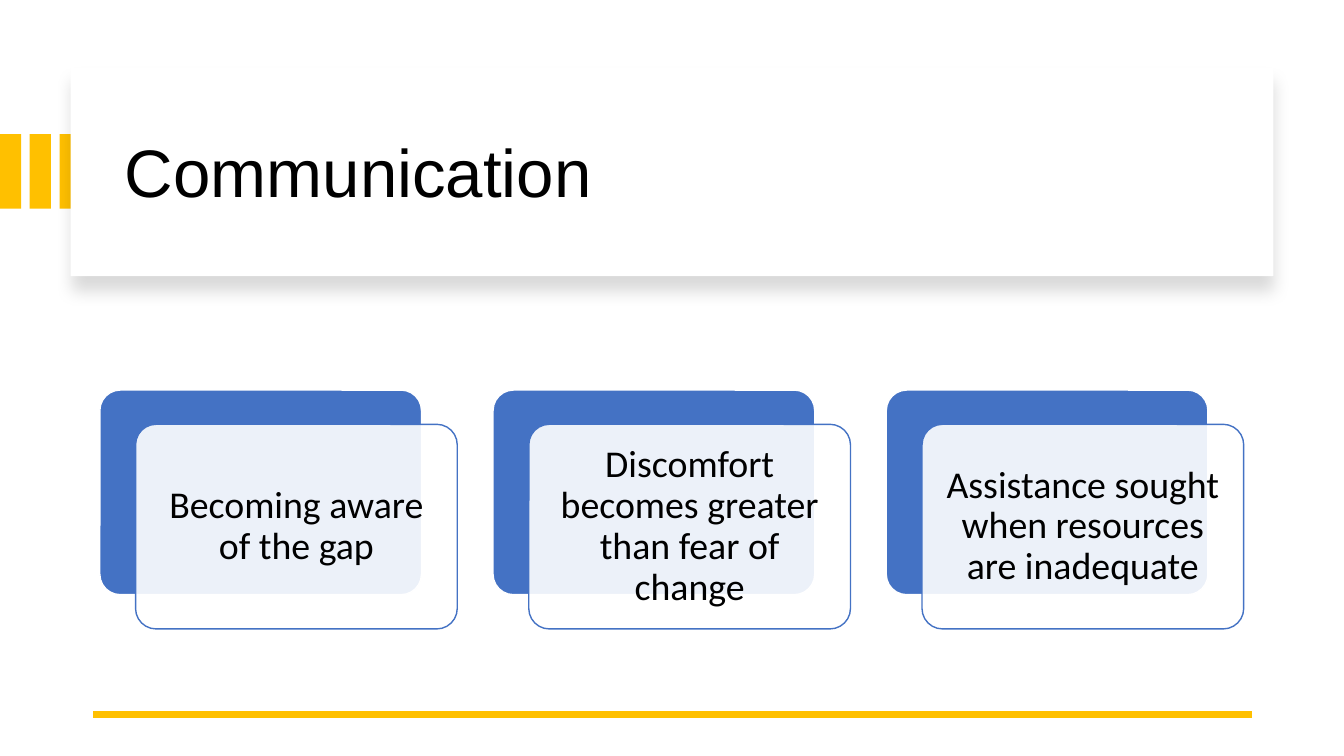
import dataclasses
from typing import Any

import lxml.etree
import pptx
import pptx.dml.color
import pptx.enum.shapes
import pptx.enum.text
import pptx.oxml.ns
import pptx.util

Inches = pptx.util.Inches
Shapes = pptx.enum.shapes.MSO_SHAPE
Align = pptx.enum.text.PP_ALIGN

GOLD, BLUE, WHITE, BLACK = "FFC000", "4472C4", "FFFFFF", "000000"
CARD_WIDTH, CARD_HEIGHT = 3.19, 2.03
CARD_LEFT, CARD_TOP, CARD_PITCH = 0.99, 3.87, 3.9
FRONT_OFFSET_X, FRONT_OFFSET_Y = 0.355, 0.34
TEXT_MARGIN = 0.06
STAGES = [
    "Becoming aware of the gap",
    "Discomfort becomes greater than fear of change",
    "Assistance sought when resources are inadequate",
]


@dataclasses.dataclass(frozen=True)
class Box:
    left: float
    top: float
    width: float
    height: float

    def lengths(self) -> list[int]:
        return [Inches(value) for value in dataclasses.astuple(self)]


@dataclasses.dataclass(frozen=True)
class TextStyle:
    font: str
    size: float
    alignment: Any
    inset_x: float
    inset_y: float


TITLE_STYLE = TextStyle("Arial", 48, Align.LEFT, 0.1, 0.05)
STAGE_STYLE = TextStyle("Calibri", 27, Align.CENTER, 0.11, 0.11)


def color(hex_value: str) -> Any:
    return pptx.dml.color.RGBColor.from_string(hex_value)


def apply_format(target: Any, values: dict[str, Any]) -> None:
    for name, value in values.items():
        setattr(target, name, value)


def add_xml(parent: Any, tag: str, **attributes: str) -> Any:
    return lxml.etree.SubElement(parent, pptx.oxml.ns.qn(tag), attributes)


def add_panel(shapes: Any, kind: Any, box: Box, fill: str, line: str | None = None) -> Any:
    shape = shapes.add_shape(kind, *box.lengths())
    shape.shadow.inherit = False
    shape.fill.solid()
    shape.fill.fore_color.rgb = color(fill)
    if line is None:
        shape.line.fill.background()
    else:
        shape.line.color.rgb = color(line)
        shape.line.width = pptx.util.Pt(1)
    return shape


def set_fill_opacity(shape: Any, percent: int) -> None:
    fill_color = shape.element.spPr.find(".//" + pptx.oxml.ns.qn("a:srgbClr"))
    add_xml(fill_color, "a:alpha", val=str(percent * 1000))


def add_drop_shadow(shape: Any, blur: float, distance: float, opacity: int) -> None:
    effects = shape.element.spPr.find(pptx.oxml.ns.qn("a:effectLst"))
    shadow = add_xml(
        effects,
        "a:outerShdw",
        blurRad=str(pptx.util.Pt(blur)),
        dist=str(pptx.util.Pt(distance)),
        dir=str(90 * 60000),
        algn="t",
        rotWithShape="0",
    )
    shadow_color = add_xml(shadow, "a:srgbClr", val=BLACK)
    add_xml(shadow_color, "a:alpha", val=str(opacity * 1000))


def add_text(shapes: Any, box: Box, text: str, style: TextStyle) -> None:
    frame = shapes.add_textbox(*box.lengths()).text_frame
    apply_format(frame, {
        "word_wrap": True,
        "vertical_anchor": pptx.enum.text.MSO_ANCHOR.MIDDLE,
        "margin_left": Inches(style.inset_x),
        "margin_right": Inches(style.inset_x),
        "margin_top": Inches(style.inset_y),
        "margin_bottom": Inches(style.inset_y),
    })
    paragraph = frame.paragraphs[0]
    apply_format(paragraph, {"alignment": style.alignment, "line_spacing": 0.9})
    run = paragraph.add_run()
    run.text = text
    apply_format(run.font, {"name": style.font, "size": pptx.util.Pt(style.size)})
    run.font.color.rgb = color(BLACK)


def add_header(slide: Any) -> None:
    stripes = slide.shapes.add_group_shape().shapes
    for index in range(3):
        add_panel(stripes, Shapes.RECTANGLE, Box(0.295 * index, 1.33, 0.21, 0.74), GOLD)
    banner = add_panel(slide.shapes, Shapes.RECTANGLE, Box(0.7, 0.67, 11.93, 2.07), WHITE)
    add_drop_shadow(banner, blur=11, distance=10, opacity=15)
    add_text(slide.shapes, Box(1.14, 0.89, 11.13, 1.7), "Communication", TITLE_STYLE)


def add_footer_line(slide: Any) -> None:
    line = slide.shapes.add_connector(
        pptx.enum.shapes.MSO_CONNECTOR.STRAIGHT,
        Inches(12.42), Inches(7.09), Inches(0.92), Inches(7.09),
    )
    line.line.color.rgb = color(GOLD)
    line.line.width = pptx.util.Pt(4.5)
    add_xml(line.element.spPr, "a:effectLst")


def add_stage(shapes: Any, left: float, text: str) -> None:
    """Draw a solid card with a translucent, captioned card offset over it."""
    back_box = Box(left, CARD_TOP, CARD_WIDTH, CARD_HEIGHT)
    front_box = Box(left + FRONT_OFFSET_X, CARD_TOP + FRONT_OFFSET_Y, CARD_WIDTH, CARD_HEIGHT)
    text_box = Box(
        front_box.left + TEXT_MARGIN,
        front_box.top + TEXT_MARGIN,
        CARD_WIDTH - 2 * TEXT_MARGIN,
        CARD_HEIGHT - 2 * TEXT_MARGIN,
    )
    back = add_panel(shapes, Shapes.ROUNDED_RECTANGLE, back_box, BLUE, WHITE)
    front = add_panel(shapes, Shapes.ROUNDED_RECTANGLE, front_box, WHITE, BLUE)
    for card in (back, front):
        card.adjustments[0] = 0.1
    set_fill_opacity(front, 90)
    add_text(shapes, text_box, text, STAGE_STYLE)


def main() -> None:
    presentation = pptx.Presentation()
    apply_format(presentation, {"slide_width": Inches(13.33), "slide_height": Inches(7.5)})
    slide = presentation.slides.add_slide(presentation.slide_layouts[6])
    add_header(slide)
    add_footer_line(slide)
    stages = slide.shapes.add_group_shape().shapes
    for index, text in enumerate(STAGES):
        add_stage(stages, CARD_LEFT + index * CARD_PITCH, text)
    presentation.save("out.pptx")


if __name__ == "__main__":
    main()
